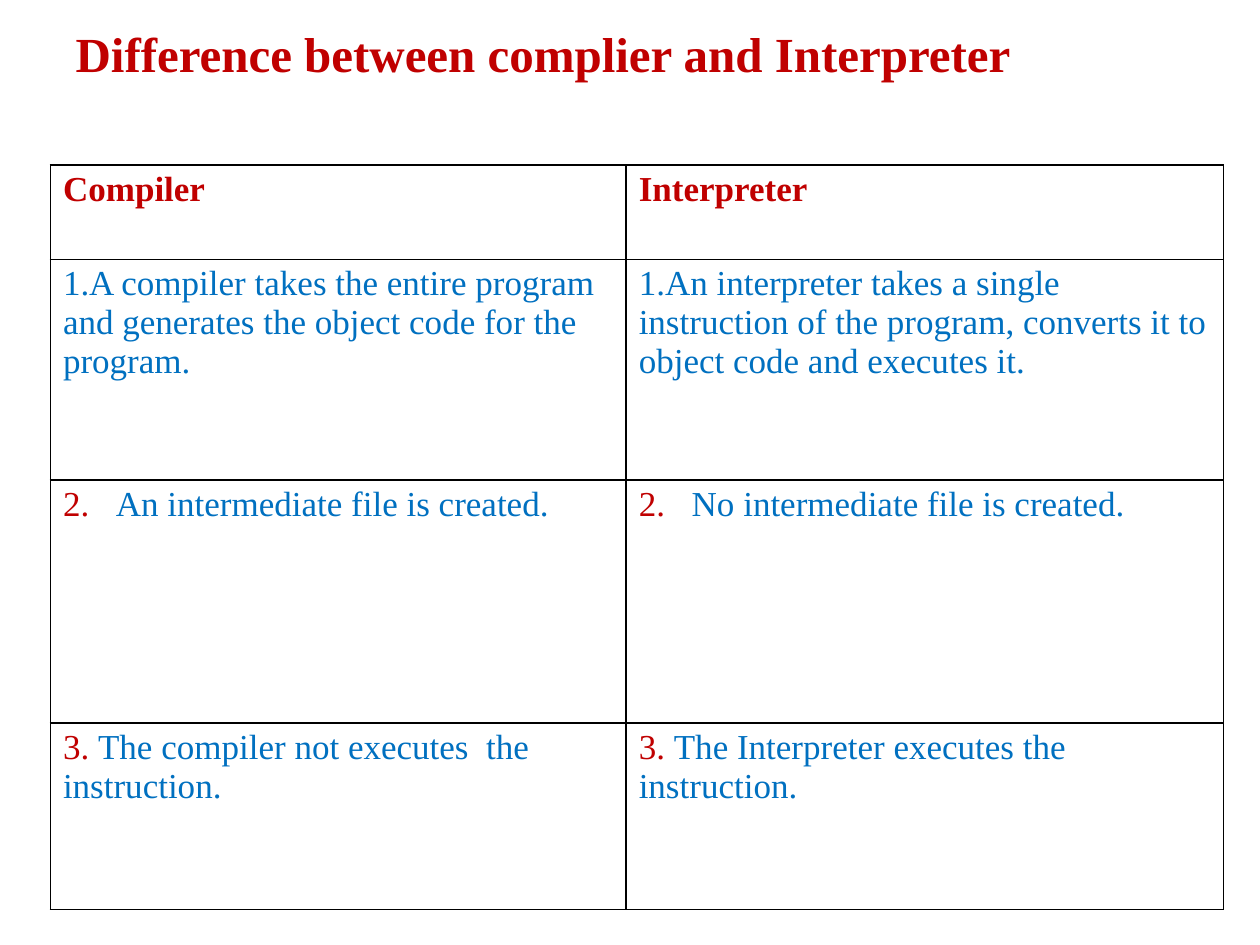
from lxml import etree
from pptx import Presentation
from pptx.dml.color import RGBColor
from pptx.enum.text import MSO_ANCHOR, PP_ALIGN
from pptx.oxml.ns import qn
from pptx.util import Inches, Pt

MIDDLE = MSO_ANCHOR.MIDDLE
LEFT = PP_ALIGN.LEFT
RED, BLUE, BLACK = "C00000", "0070C0", "000000"


def format_run(run, size, color, bold=False):
    run.font.name = "Times New Roman"
    run.font.size = Pt(size)
    run.font.bold = bold
    run.font.color.rgb = RGBColor.from_string(color)


def add_borders(cell):
    properties = cell._tc.get_or_add_tcPr()
    for side in ("a:lnL", "a:lnR", "a:lnT", "a:lnB"):
        line = etree.SubElement(properties, qn(side), w=str(Pt(1)))
        fill = etree.SubElement(line, qn("a:solidFill"))
        etree.SubElement(fill, qn("a:srgbClr"), val=BLACK)


presentation = Presentation()
presentation.slide_width = Inches(10)
presentation.slide_height = Inches(7.5)
slide = presentation.slides.add_slide(presentation.slide_layouts[5])

column_widths = [4.57, 4.74]
row_heights = [0.75, 1.75, 1.93, 1.48]
# Each row: typed number, then the compiler and interpreter texts
rows = [
    ("", "Compiler", "Interpreter"),
    ("", "A compiler takes the entire program and generates the object code for the program.",
     "An interpreter takes a single instruction of the program, converts it to object code and executes it."),
    ("2.\t", "An intermediate file is created.", "No intermediate file is created."),
    ("3. ", "The compiler not executes  the instruction.", "The Interpreter executes the instruction."),
]
HEADER_ROW, AUTO_NUMBERED_ROW, INDENTED_ROW = 0, 1, 2

table = slide.shapes.add_table(
    len(rows), len(column_widths), Inches(0.4), Inches(1.31),
    Inches(sum(column_widths)), Inches(sum(row_heights))).table
table.first_row = False
table.horz_banding = False
for column, width in zip(table.columns, column_widths):
    column.width = Inches(width)
for row, height in zip(table.rows, row_heights):
    row.height = Inches(height)

for row_index, (number, *texts) in enumerate(rows):
    for column_index, text in enumerate(texts):
        cell = table.cell(row_index, column_index)
        cell.margin_left = cell.margin_right = Inches(0.1)
        cell.margin_top = cell.margin_bottom = Inches(0.04)
        add_borders(cell)
        cell.fill.background()

        paragraph = cell.text_frame.paragraphs[0]
        if number:
            run = paragraph.add_run()
            run.text = number
            format_run(run, 20, RED)
        run = paragraph.add_run()
        run.text = text
        is_header = row_index == HEADER_ROW
        format_run(run, 20, RED if is_header else BLUE, is_header)

        properties = paragraph._p.get_or_add_pPr()
        if row_index == AUTO_NUMBERED_ROW:
            etree.SubElement(properties, qn("a:buFont"), typeface="+mj-lt")
            etree.SubElement(properties, qn("a:buAutoNum"), type="arabicPeriod")
        elif row_index == INDENTED_ROW:
            properties.set("marL", str(Inches(0.42)))
            properties.set("indent", str(Inches(-0.42)))

title = slide.shapes.title
title.left, title.top = Inches(0.5), Inches(0.09)
title.width, title.height = Inches(9.08), Inches(0.66)
title.text_frame.text = "Difference between complier and Interpreter"
title.text_frame.vertical_anchor = MIDDLE
paragraph = title.text_frame.paragraphs[0]
paragraph.alignment = LEFT
format_run(paragraph.runs[0], 28, RED, True)

presentation.save("out.pptx")
